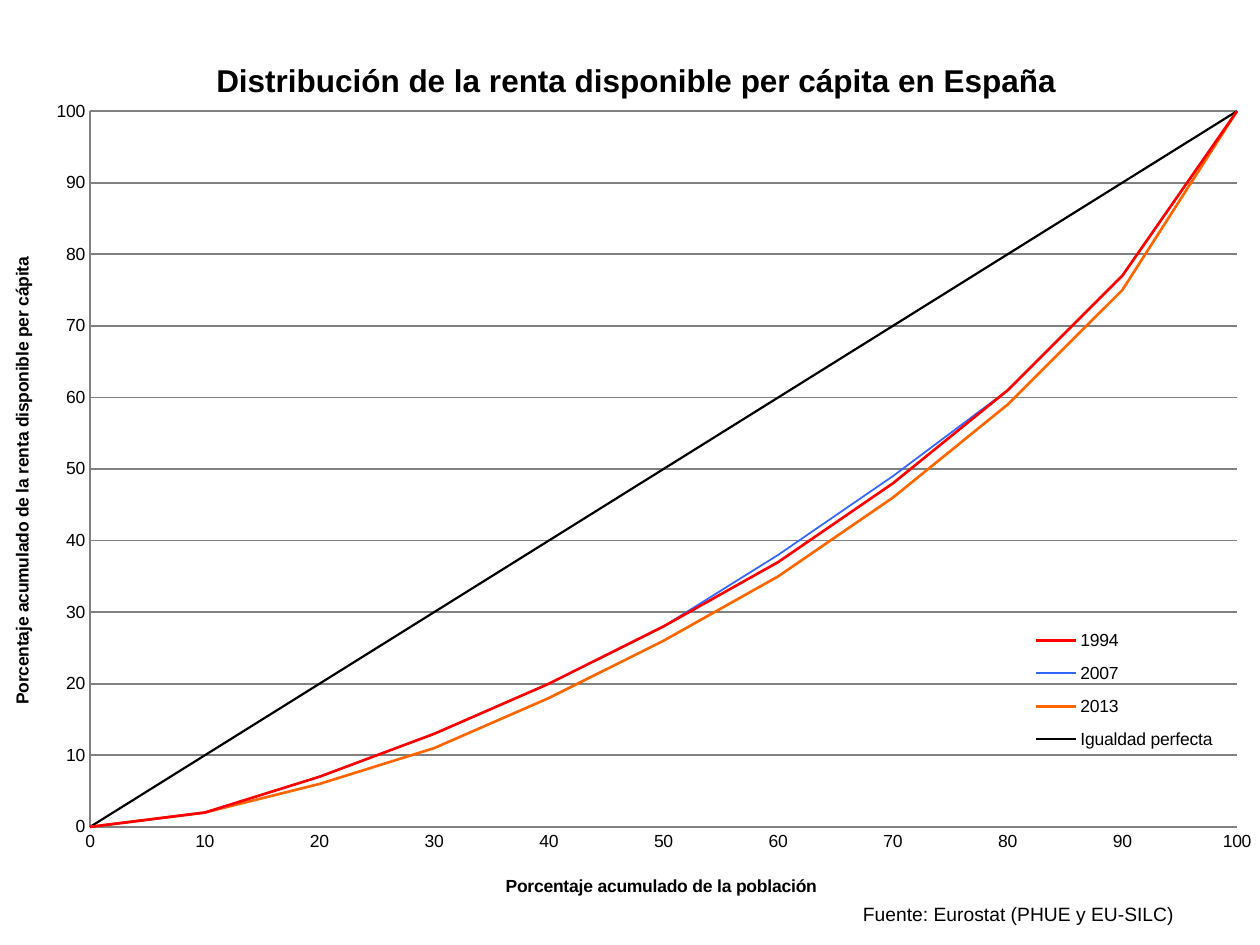
from lxml import etree
from pptx import Presentation
from pptx import util as u
from pptx.chart.data import XyChartData
from pptx.dml.color import RGBColor
from pptx.enum import chart as ch
from pptx.oxml.ns import qn

PERCENT = range(0, 101, 10)
SERIES = [
    ("1994", [0, 2, 7, 13, 20, 28, 37, 48, 61, 77, 100], "FF0000", 1.5),
    ("2007", [0, 2, 7, 13, 20, 28, 38, 49, 61, 77, 100], "3366FF", 1),
    ("2013", [0, 2, 6, 11, 18, 26, 35, 46, 59, 75, 100], "FF6600", 1.5),
    ("Igualdad perfecta", PERCENT, "000000", 1.25),
]


def color(value):
    return RGBColor.from_string(value)


def write(tf, content, size=10, bold=False, fill="000000", name="Arial"):
    p = tf.paragraphs[0]
    r = p.add_run()
    r.text = content
    r.font.size = u.Pt(size)
    r.font.bold = bold
    r.font.name = name
    r.font.color.rgb = color(fill)


def place(element, x, y, w=None, h=None, inner=False):
    for old in element.findall(qn("c:layout")):
        element.remove(old)
    before = [e for e in element if e.tag in (qn("c:tx"), qn("c:legendPos"))]
    layout = etree.Element(qn("c:layout"))
    element.insert(len(before), layout)
    manual = etree.SubElement(layout, qn("c:manualLayout"))
    values = [("xMode", "edge"), ("yMode", "edge"), ("x", x), ("y", y), ("w", w), ("h", h)]
    if inner:
        values.insert(0, ("layoutTarget", "inner"))
    for tag, value in values:
        if value is not None:
            etree.SubElement(manual, qn(f"c:{tag}")).set("val", str(value))


class Deck:
    font = "Arial"
    ink = "000000"
    grid = "808080"

    def __init__(self, width, height):
        self.prs = Presentation()
        self.prs.slide_width = u.Inches(width)
        self.prs.slide_height = u.Inches(height)
        self.s = self.prs.slides.add_slide(self.prs.slide_layouts[6])

    def line(self, fmt, fill, width):
        fmt.line.color.rgb = color(fill)
        fmt.line.width = u.Pt(width)

    def axis(self, axis, title, x, y, gridlines):
        axis.minimum_scale, axis.maximum_scale, axis.major_unit = 0, 100, 10
        axis.major_tick_mark = axis.minor_tick_mark = ch.XL_TICK_MARK.NONE
        axis.tick_labels.number_format = "0"
        axis.tick_labels.number_format_is_linked = False
        self.line(axis.format, self.grid, 1)
        axis.has_major_gridlines = gridlines
        if gridlines:
            self.line(axis.major_gridlines.format, self.grid, 1)
        write(axis.axis_title.text_frame, title, bold=True, name=self.font)
        place(axis.axis_title._element, x, y)

    def lorenz_chart(self, x, y, w, h):
        data = XyChartData()
        for name, values, _, _ in SERIES:
            series = data.add_series(name)
            for point in zip(PERCENT, values):
                series.add_data_point(*point)
        frame = self.s.shapes.add_chart(
            ch.XL_CHART_TYPE.XY_SCATTER_LINES_NO_MARKERS,
            u.Inches(x), u.Inches(y), u.Inches(w), u.Inches(h), data)
        chart = frame.chart
        chart.font.name, chart.font.size = self.font, u.Pt(10)
        chart.font.color.rgb = color(self.ink)
        chart.plots[0].vary_by_categories = False
        for series, (_, _, fill, width) in zip(chart.series, SERIES):
            series.smooth = False
            series.marker.style = ch.XL_MARKER_STYLE.NONE
            self.line(series.format, fill, width)

        write(chart.chart_title.text_frame,
              "Distribución de la renta disponible per cápita en España",
              size=18, bold=True)
        place(chart.chart_title._element, 0.17, 0.04)
        self.axis(chart.category_axis, "Porcentaje acumulado de la población",
                  0.4, 0.94, False)
        self.axis(chart.value_axis,
                  "Porcentaje acumulado de la renta disponible per cápita",
                  0.01, 0.26, True)
        body = chart.value_axis.axis_title.text_frame._txBody.find(qn("a:bodyPr"))
        body.set("rot", "-5400000")
        body.set("vert", "horz")

        chart.has_legend = True
        chart.legend.position = ch.XL_LEGEND_POSITION.RIGHT
        chart.legend.include_in_layout = False
        place(chart.legend._element, 0.81, 0.66, 0.16, 0.16)
        plot_area = chart._chartSpace.find(".//" + qn("c:plotArea"))
        place(plot_area, 0.075, 0.103, 0.904, 0.788, inner=True)

    def text(self, content, x, y, w, h, **style):
        sp = self.s.shapes.add_textbox(u.Inches(x), u.Inches(y), u.Inches(w), u.Inches(h))
        tf = sp.text_frame
        tf.word_wrap = True
        tf.margin_top = tf.margin_bottom = 0
        write(tf, content, name=self.font, **style)


def main():
    deck = Deck(10, 7.5)
    deck.lorenz_chart(-0.04, 0.14, 10.07, 7.21)
    deck.text("Fuente: Eurostat (PHUE y EU-SILC)", 6.75, 7.16, 2.85, 0.23, size=11)
    deck.prs.save("out.pptx")


if __name__ == "__main__":
    main()
